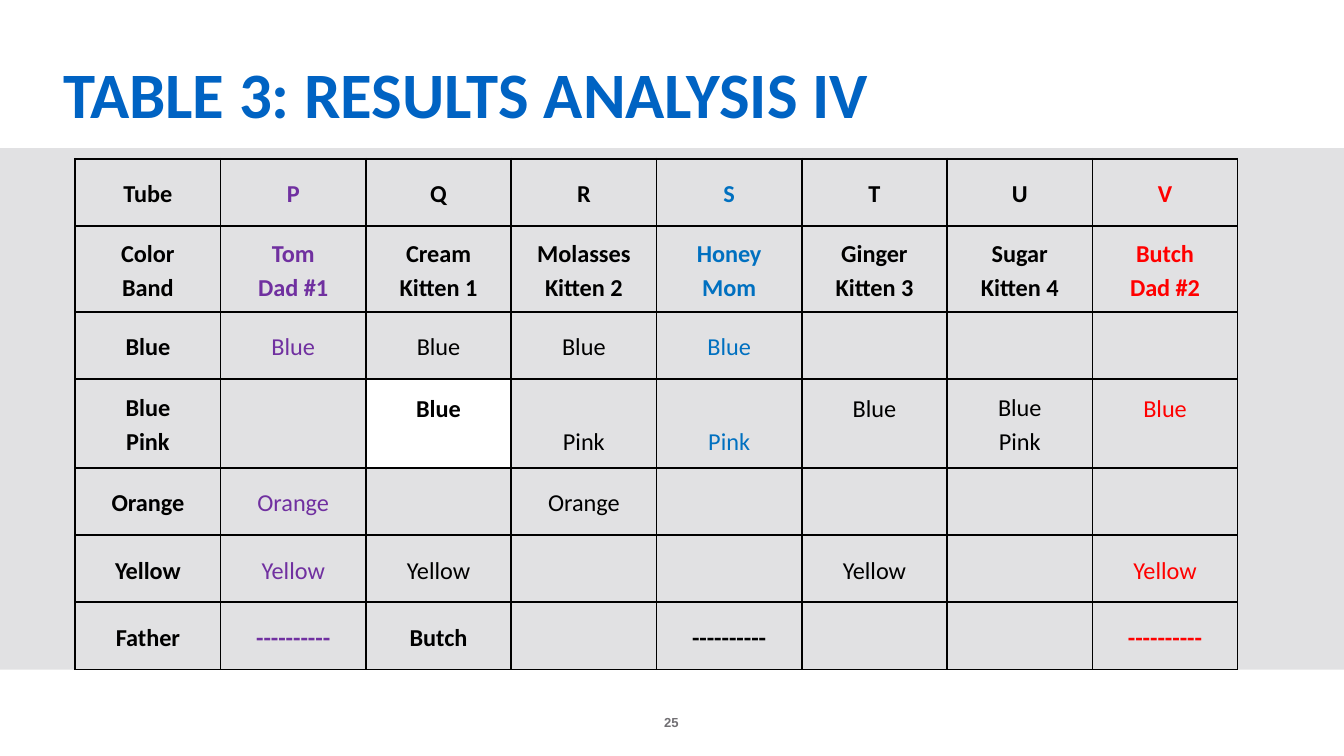
from lxml.etree import SubElement
from pptx import Presentation
from pptx.dml.color import RGBColor
from pptx.enum.shapes import MSO_SHAPE
from pptx.enum.text import MSO_ANCHOR, MSO_AUTO_SIZE, PP_ALIGN
from pptx.oxml.ns import qn
from pptx.util import Inches, Pt

BLACK = RGBColor(0x00, 0x00, 0x00)
WHITE = RGBColor(0xFF, 0xFF, 0xFF)
BAND_GREY = RGBColor(0xE1, 0xE1, 0xE3)
NUMBER_GREY = RGBColor(0x71, 0x6F, 0x73)
TITLE_BLUE = RGBColor(0x00, 0x63, 0xC3)
DAD_1_PURPLE = RGBColor(0x70, 0x30, 0xA0)
MOM_BLUE = RGBColor(0x00, 0x70, 0xC0)
DAD_2_RED = RGBColor(0xFF, 0x00, 0x00)

DASHES = "-" * 10
RESULTS = [
    ["Tube", "P", "Q", "R", "S", "T", "U", "V"],
    ["Color\nBand", "Tom\nDad #1", "Cream\nKitten 1", "Molasses\nKitten 2",
     "Honey\nMom", "Ginger\nKitten 3", "Sugar\nKitten 4", "Butch\nDad #2"],
    ["Blue", "Blue", "Blue", "Blue", "Blue", "", "", ""],
    ["Blue\nPink", "", "Blue", "Pink", "Pink", "Blue", "Blue\nPink", "Blue"],
    ["Orange", "Orange", "", "Orange", "", "", "", ""],
    ["Yellow", "Yellow", "Yellow", "", "", "Yellow", "", "Yellow"],
    ["Father", DASHES, "Butch", "", DASHES, "", "", DASHES],
]
ROW_HEIGHTS = [0.5, 0.64, 0.5, 0.66, 0.5, 0.5, 0.5]
COLUMN_COLORS = {1: DAD_1_PURPLE, 4: MOM_BLUE, 7: DAD_2_RED}
BOLD_ROWS = (0, 1, 6)
FATHER_ROW, PINK_ROW = 6, 3
MOM_COLUMN = 4
KEY_CELL = (3, 2)
# In the two-band row a lone band keeps its own line
BAND_ANCHORS = {"Blue": MSO_ANCHOR.TOP, "Pink": MSO_ANCHOR.BOTTOM}


class SlideBuilder:
    """Holds the style and the current slide; lengths are shares of the slide."""

    font_name = "Calibri"
    table_size = 13
    inset = Inches(0.07)
    lone_band_inset = Inches(0.08)

    def __init__(self, presentation):
        self.width = presentation.slide_width
        self.height = presentation.slide_height
        self.slide = presentation.slides.add_slide(presentation.slide_layouts[5])

    def box(self, left, top, width, height):
        return (round(left * self.width), round(top * self.height),
                round(width * self.width), round(height * self.height))

    def style(self, paragraph, size, color, bold=True, name=None,
              alignment=PP_ALIGN.CENTER):
        paragraph.alignment = alignment
        font = paragraph.font
        font.name = name or self.font_name
        font.size = Pt(size)
        font.bold = bold
        font.color.rgb = color

    def band(self, color, *shares):
        shape = self.slide.shapes.add_shape(MSO_SHAPE.RECTANGLE, *self.box(*shares))
        shape.shadow.inherit = False
        shape.fill.solid()
        shape.fill.fore_color.rgb = color
        shape.line.fill.background()

    def title(self, text, *shares):
        shape = self.slide.shapes.title
        shape.left, shape.top, shape.width, shape.height = self.box(*shares)
        frame = shape.text_frame
        frame.text = text
        frame.auto_size = MSO_AUTO_SIZE.NONE
        frame.vertical_anchor = MSO_ANCHOR.BOTTOM
        frame.margin_left = frame.margin_right = self.inset
        frame.margin_top = frame.margin_bottom = Inches(0.04)
        self.style(frame.paragraphs[0], 34.7, TITLE_BLUE, alignment=PP_ALIGN.LEFT)

    def slide_number(self, text, *shares):
        frame = self.slide.shapes.add_textbox(*self.box(*shares)).text_frame
        frame.word_wrap = True
        frame.vertical_anchor = MSO_ANCHOR.BOTTOM
        frame.margin_left = frame.margin_right = 0
        frame.margin_top = frame.margin_bottom = 0
        frame.text = text
        self.style(frame.paragraphs[0], 7, NUMBER_GREY, name="Arial")

    def table(self, rows, heights, *shares):
        table = self.slide.shapes.add_table(
            len(rows), len(rows[0]), *self.box(*shares)).table
        table.first_row = table.horz_banding = False
        for row, height in zip(table.rows, heights):
            row.height = Inches(height)
        for row_index, texts in enumerate(rows):
            for column_index, text in enumerate(texts):
                self.cell(table.cell(row_index, column_index), text,
                          row_index, column_index)

    def cell(self, cell, text, row, column):
        self.borders(cell)
        is_key = (row, column) == KEY_CELL
        if is_key:
            cell.fill.solid()
            cell.fill.fore_color.rgb = WHITE
        else:
            cell.fill.background()
        is_lone_band = row == PINK_ROW and text in BAND_ANCHORS
        cell.margin_left = cell.margin_right = self.inset
        cell.margin_top = cell.margin_bottom = (
            self.lone_band_inset if is_lone_band else self.inset)
        cell.vertical_anchor = (
            BAND_ANCHORS[text] if is_lone_band else MSO_ANCHOR.MIDDLE)
        color = COLUMN_COLORS.get(column, BLACK)
        if (row, column) == (FATHER_ROW, MOM_COLUMN):
            color = BLACK
        bold = row in BOLD_ROWS or column == 0 or is_key
        cell.text_frame.text = text
        for paragraph in cell.text_frame.paragraphs:
            paragraph.line_spacing = 1.15
            self.style(paragraph, self.table_size, color, bold)

    def borders(self, cell):
        properties = cell._tc.get_or_add_tcPr()
        for side in ("a:lnL", "a:lnR", "a:lnT", "a:lnB"):
            line = SubElement(properties, qn(side), w=str(Pt(1)))
            fill = SubElement(line, qn("a:solidFill"))
            SubElement(fill, qn("a:srgbClr"), val=str(BLACK))


def main():
    presentation = Presentation()
    presentation.slide_width = Inches(10)
    presentation.slide_height = presentation.slide_width * 9 // 16
    builder = SlideBuilder(presentation)

    # Background band and slide number
    builder.band(BAND_GREY, 0, 0.196, 1, 0.69)
    builder.slide_number("25", 0.454, 0.913, 0.091, 0.053)

    # Title and results table
    builder.title("TABLE 3: RESULTS ANALYSIS IV", 0.04, 0.064, 0.92, 0.117)
    builder.table(RESULTS, ROW_HEIGHTS, 0.056, 0.21, 0.865, 0.676)

    presentation.save("out.pptx")


if __name__ == "__main__":
    main()
